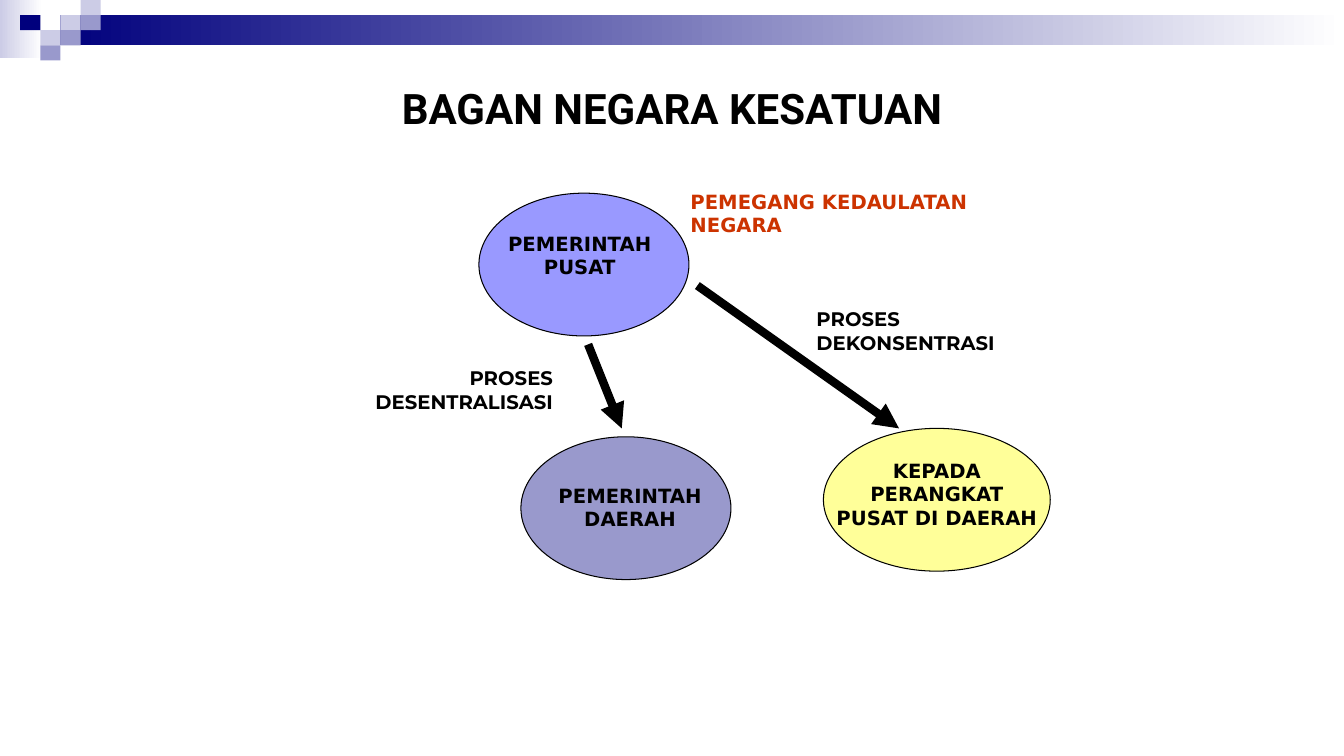
from pptx import Presentation
from pptx.dml.color import RGBColor
from pptx.enum.shapes import MSO_CONNECTOR, MSO_SHAPE
from pptx.enum.text import MSO_ANCHOR, MSO_AUTO_SIZE, PP_ALIGN
from pptx.oxml.ns import qn
from pptx.util import Inches, Pt
from lxml.etree import SubElement

BLACK = RGBColor(0x00, 0x00, 0x00)
WHITE = RGBColor(0xFF, 0xFF, 0xFF)
NAVY = RGBColor(0x00, 0x00, 0x7D)
LILAC = RGBColor(0xCC, 0xCC, 0xE6)
SLATE = RGBColor(0x99, 0x99, 0xCC)
VIOLET = RGBColor(0x99, 0x99, 0xFF)
YELLOW = RGBColor(0xFF, 0xFF, 0x99)
RED = RGBColor(0xCC, 0x33, 0x00)
LEFT, CENTER, RIGHT = PP_ALIGN.LEFT, PP_ALIGN.CENTER, PP_ALIGN.RIGHT

# Content: positions count cells of the diagram grid, 12 to the inch
TITLE = "BAGAN NEGARA KESATUAN"
OVALS = [  # left, top, width, fill
    (98, 51, 27, YELLOW),
    (62, 52, 25, SLATE),
    (57, 23, 25, VIOLET),
]
OVAL_ROWS = 17
ARROWS = [((70, 41), (74, 51)), ((83, 34), (107, 51))]
LABELS = [  # text, left, top, width, lines, format
    ("PEMERINTAH PUSAT", 56, 27, 26, 2, dict(align=CENTER)),
    ("PEMERINTAH DAERAH", 63, 57, 24, 2, dict(align=CENTER)),
    ("KEPADA PERANGKAT PUSAT DI DAERAH", 98, 54, 27, 3, dict(align=CENTER)),
    ("PEMEGANG KEDAULATAN NEGARA", 81, 22, 36, 2, dict(color=RED)),
    ("PROSES DESENTRALISASI", 39, 43, 28, 2,
     dict(align=RIGHT, font="Montserrat")),
    ("PROSES DEKONSENTRASI", 96, 36, 25, 2, dict(font="Montserrat")),
]
# Header mosaic: column, row, fill
TILES = [(3, 1, LILAC), (4, 0, LILAC), (4, 1, SLATE), (2, 2, LILAC),
         (1, 1, NAVY), (3, 2, SLATE), (2, 3, SLATE)]
TILE_W, TILE_H = 0.2, 0.15

prs = Presentation()
prs.slide_width, prs.slide_height = Inches(13.33), Inches(7.5)
s = prs.slides.add_slide(prs.slide_layouts[5])


def cells(*counts):
    return [Inches(n / 12) for n in counts]


def add_block(kind, box, fill, fade=False, line=None):
    sp = s.shapes.add_shape(kind, *box)
    sp.shadow.inherit = False
    if fade:
        sp.fill.gradient()
        sp.fill.gradient_angle = 0
        for stop, color in zip(sp.fill.gradient_stops, (fill, WHITE)):
            stop.color.rgb = color
    else:
        sp.fill.solid()
        sp.fill.fore_color.rgb = fill
    if line is None:
        sp.line.fill.background()
    else:
        sp.line.color.rgb = line
        sp.line.width = Pt(0.75)


def write(tf, text, size=14, font="DejaVu Sans", color=BLACK, align=LEFT):
    tf.word_wrap = True
    p = tf.paragraphs[0]
    p.alignment = align
    r = p.add_run()
    r.text = text
    r.font.size, r.font.name, r.font.bold = Pt(size), font, True
    r.font.color.rgb = color


# Header: two fading bands under a mosaic of tiles
bands = [((0, 0, 0.42, 0.58), LILAC),
         ((3 * TILE_W, TILE_H, 13.33 - 3 * TILE_W, 2 * TILE_H), NAVY)]
for box, color in bands:
    add_block(MSO_SHAPE.RECTANGLE, [Inches(v) for v in box], color, fade=True)
for col, row, color in TILES:
    box = (col * TILE_W, row * TILE_H, TILE_W, TILE_H)
    add_block(MSO_SHAPE.RECTANGLE, [Inches(v) for v in box], color)

# Title
title = s.shapes.title
title.left, title.top, title.width, title.height = cells(8, 8.6, 144, 8.5)
title.text_frame.vertical_anchor = MSO_ANCHOR.MIDDLE
title.text_frame.auto_size = MSO_AUTO_SIZE.NONE
write(title.text_frame, TITLE, size=30, font="Roboto", align=CENTER)

# Ovals
for left, top, width, color in OVALS:
    add_block(MSO_SHAPE.OVAL, cells(left, top, width, OVAL_ROWS), color,
              line=BLACK)

# Arrows
for start, end in ARROWS:
    c = s.shapes.add_connector(MSO_CONNECTOR.STRAIGHT, *cells(*start, *end))
    c.line.color.rgb = BLACK
    c.line.width = Pt(6)
    SubElement(c.line._get_or_add_ln(), qn("a:tailEnd"), type="triangle")
    SubElement(c._element.spPr, qn("a:effectLst"))

# Labels
for text, left, top, width, lines, style in LABELS:
    tb = s.shapes.add_textbox(*cells(left, top, width, 1.2 + 2.8 * lines))
    tb.text_frame.auto_size = MSO_AUTO_SIZE.SHAPE_TO_FIT_TEXT
    write(tb.text_frame, text, **style)

prs.save("out.pptx")
